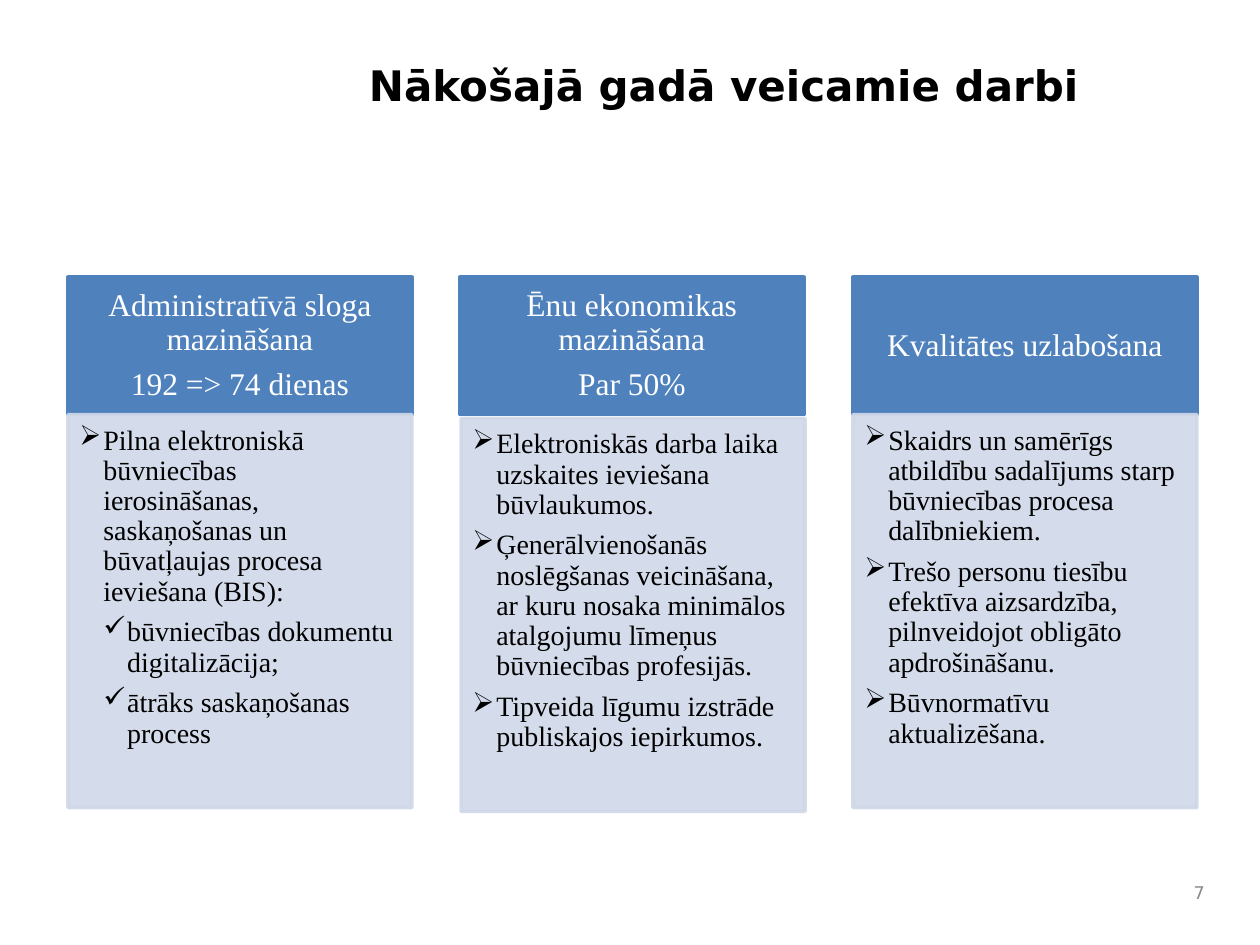
from dataclasses import dataclass

from lxml import etree
from pptx import Presentation
from pptx import util as u
from pptx.dml.color import RGBColor
from pptx.enum import shapes, text
from pptx.oxml import ns

BLACK = RGBColor(0x00, 0x00, 0x00)
WHITE = RGBColor(0xFF, 0xFF, 0xFF)
BLUE = RGBColor(0x4F, 0x81, 0xBD)
PALE_BLUE = RGBColor(0xD0, 0xD8, 0xE8)
GREY = RGBColor(0x89, 0x89, 0x89)
SANS = "DejaVu Sans"
SERIF = "Times New Roman"

COLUMN_WIDTH, HEADER_HEIGHT, BODY_HEIGHT = 2.73, 1.09, 3.12
HEADER_TOP = 2.2
BULLET_INDENT = 0.19
BULLETS = {1: "➢", 2: "✓"}
HEADER_INSETS = (0.14, 0.08, 0.14, 0.08)
BODY_INSETS = (0.09, 0.09, 0.12, 0.14)
LABEL_INSETS = (0.1, 0.05, 0.1, 0.05)


@dataclass(frozen=True)
class Task:
    wording: str
    level: int = 1


@dataclass(frozen=True)
class Column:
    left: float
    heading: list[str]
    tasks: list[Task]
    body_shift: tuple[float, float] = (0, 0)


COLUMNS = [
    Column(0.54, ["Administratīvā sloga mazināšana", "192 => 74 dienas"], [
        Task("Pilna elektroniskā būvniecības ierosināšanas, saskaņošanas un "
             "būvatļaujas procesa ieviešana (BIS):"),
        Task("būvniecības dokumentu digitalizācija;", 2),
        Task("ātrāks saskaņošanas process", 2),
    ]),
    Column(3.65, ["Ēnu ekonomikas mazināšana", "Par 50%"], [
        Task("Elektroniskās darba laika uzskaites ieviešana būvlaukumos."),
        Task("Ģenerālvienošanās noslēgšanas veicināšana, ar kuru nosaka "
             "minimālos atalgojumu līmeņus būvniecības profesijās."),
        Task("Tipveida līgumu izstrāde publiskajos iepirkumos."),
    ], (0.01, 0.03)),
    Column(6.77, ["Kvalitātes uzlabošana"], [
        Task("Skaidrs un samērīgs atbildību sadalījums starp būvniecības "
             "procesa dalībniekiem."),
        Task("Trešo personu tiesību efektīva aizsardzība, pilnveidojot "
             "obligāto apdrošināšanu."),
        Task("Būvnormatīvu aktualizēšana."),
    ]),
]


def set_frame(frame, insets: tuple, anchor) -> None:
    frame.word_wrap = True
    frame.vertical_anchor = anchor
    (frame.margin_left, frame.margin_top,
     frame.margin_right, frame.margin_bottom) = map(u.Inches, insets)


def set_font(paragraph, name: str, size: float, color: RGBColor, bold: bool = False) -> None:
    font = paragraph.font
    font.name, font.size, font.bold = name, u.Pt(size), bold
    font.color.rgb = color


def add_panel(slide, left: float, top: float, height: float, color: RGBColor):
    panel = slide.shapes.add_shape(
        shapes.MSO_SHAPE.RECTANGLE, u.Inches(left), u.Inches(top),
        u.Inches(COLUMN_WIDTH), u.Inches(height))
    panel.shadow.inherit = False
    panel.fill.solid()
    panel.fill.fore_color.rgb = color
    panel.line.color.rgb = color
    panel.line.width = u.Pt(2)
    return panel


def set_opacity(panel, percent: int) -> None:
    for color in panel.element.spPr.iter(ns.qn("a:srgbClr")):
        etree.SubElement(color, ns.qn("a:alpha"), val=str(percent * 1000))


def add_bullet(paragraph, level: int) -> None:
    properties = paragraph._p.get_or_add_pPr()
    properties.set("marL", str(u.Inches(BULLET_INDENT * level)))
    properties.set("indent", str(-u.Inches(BULLET_INDENT)))
    etree.SubElement(properties, ns.qn("a:buChar"), char=BULLETS[level])


def fill_paragraphs(frame, wordings: list[str], space_after: float) -> list:
    frame.text = "\n".join(wordings)
    for paragraph in frame.paragraphs:
        paragraph.line_spacing = 0.9
        paragraph.space_after = u.Pt(space_after)
    return list(frame.paragraphs)


def add_column(slide, column: Column) -> None:
    header = add_panel(slide, column.left, HEADER_TOP, HEADER_HEIGHT, BLUE)
    set_frame(header.text_frame, HEADER_INSETS, text.MSO_ANCHOR.MIDDLE)
    for paragraph in fill_paragraphs(header.text_frame, column.heading, 6.3):
        paragraph.alignment = text.PP_ALIGN.CENTER
        set_font(paragraph, SERIF, 18, WHITE)

    shift_x, shift_y = column.body_shift
    body = add_panel(slide, column.left + shift_x,
                     HEADER_TOP + HEADER_HEIGHT + shift_y, BODY_HEIGHT, PALE_BLUE)
    set_opacity(body, 90)
    set_frame(body.text_frame, BODY_INSETS, text.MSO_ANCHOR.TOP)
    wordings = [task.wording for task in column.tasks]
    for task, paragraph in zip(column.tasks, fill_paragraphs(body.text_frame, wordings, 6)):
        paragraph.alignment = text.PP_ALIGN.LEFT
        add_bullet(paragraph, task.level)
        set_font(paragraph, SERIF, 16, BLACK)


def add_label(slide, wording: str, box: tuple, anchor, alignment,
              size: float, color: RGBColor, bold: bool = False) -> None:
    label = slide.shapes.add_textbox(*map(u.Inches, box))
    set_frame(label.text_frame, LABEL_INSETS, anchor)
    paragraph = label.text_frame.paragraphs[0]
    paragraph.text = wording
    paragraph.alignment = alignment
    set_font(paragraph, SANS, size, color, bold)


def main() -> None:
    deck = Presentation()
    deck.slide_width, deck.slide_height = u.Inches(10), u.Inches(7.5)
    slide = deck.slides.add_slide(deck.slide_layouts[6])
    add_label(slide, "Nākošajā gadā veicamie darbi", (2.83, 0.42, 6.67, 1.13),
              text.MSO_ANCHOR.TOP, text.PP_ALIGN.LEFT, 24, BLACK, True)
    for column in COLUMNS:
        add_column(slide, column)
    add_label(slide, "7", (9.33, 6.92, 0.33, 0.33),
              text.MSO_ANCHOR.MIDDLE, text.PP_ALIGN.RIGHT, 10, GREY)
    deck.save("out.pptx")


if __name__ == "__main__":
    main()
